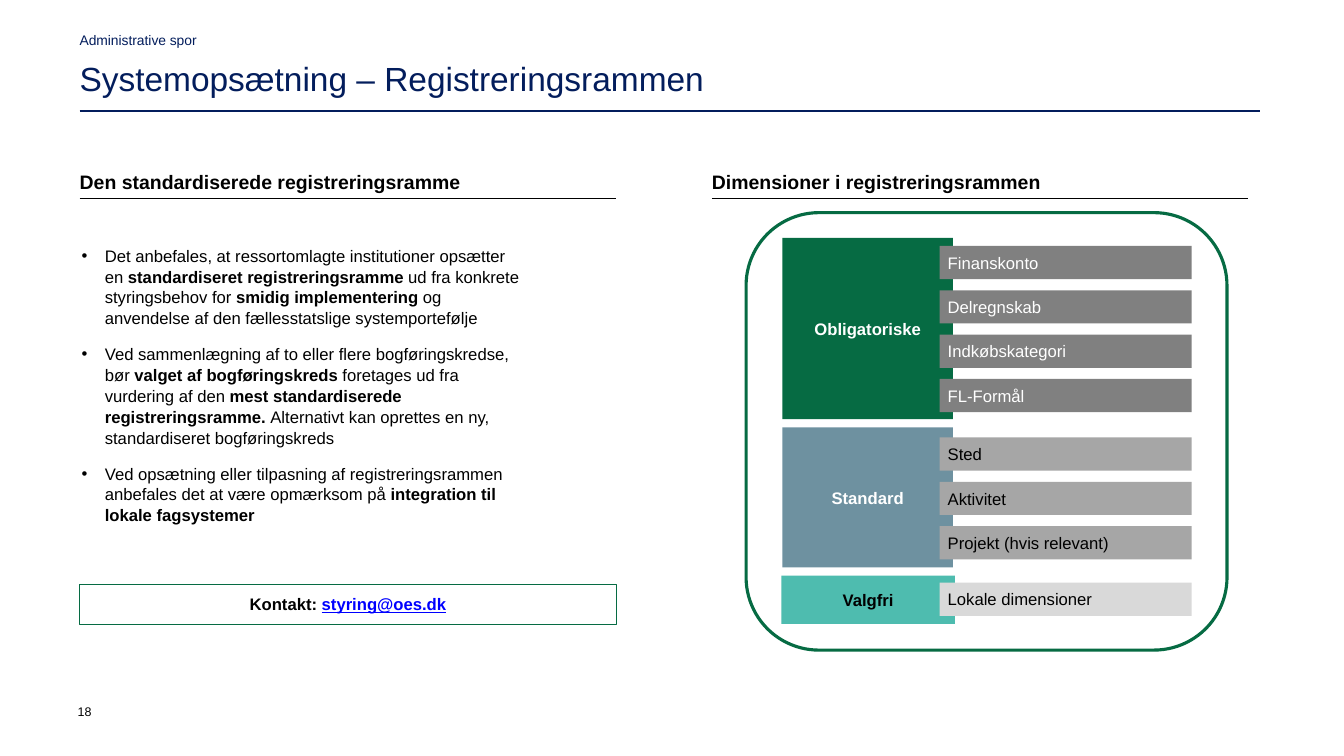
from lxml import etree
from pptx import Presentation
from pptx import util as u
from pptx.dml import color
from pptx.enum import shapes, text
from pptx.oxml import ns

NAVY, GREEN, BLACK, WHITE = "031D5C", "066B43", "000000", "FFFFFF"
LEFT, RIGHT, COLUMN_WIDTH = 0.79, 7.06, 5.32
BAR_STEP = 0.44


def paint(target, hex_value):
    target.rgb = color.RGBColor.from_string(hex_value)


def box(left, top, width, height):
    return [u.Inches(value) for value in (left, top, width, height)]


class SlideBuilder:
    font_name = "Arial"

    def __init__(self, presentation):
        self.slide = presentation.slides.add_slide(presentation.slide_layouts[5])

    def fill_text(self, shape, paragraphs, size, hex_value=BLACK, insets=(0, 0, 0, 0),
                  bullet=False, anchor=text.MSO_ANCHOR.TOP, **paragraph_format):
        frame = shape.text_frame
        left, top, right, bottom = [u.Inches(inset) for inset in insets]
        frame_format = {
            "word_wrap": True, "auto_size": text.MSO_AUTO_SIZE.NONE,
            "vertical_anchor": anchor, "margin_left": left, "margin_top": top,
            "margin_right": right, "margin_bottom": bottom,
        }
        for name, value in frame_format.items():
            setattr(frame, name, value)
        for index, runs in enumerate(paragraphs):
            paragraph = frame.add_paragraph() if index else frame.paragraphs[0]
            settings = {"alignment": text.PP_ALIGN.LEFT,
                        "space_before": u.Pt(10.9 if index else 0)}
            settings.update(paragraph_format)
            for name, value in settings.items():
                setattr(paragraph, name, value)
            if bullet:
                self.add_bullet(paragraph)
            for words, run_format in runs:
                run = paragraph.add_run()
                run.text = words
                font_format = {"name": self.font_name, "size": u.Pt(size), "bold": False}
                run_color = run_format.get("color", hex_value)
                font_format.update((key, value) for key, value in run_format.items()
                                   if key != "color")
                for name, value in font_format.items():
                    setattr(run.font, name, value)
                paint(run.font.color, run_color)

    def add_bullet(self, paragraph):
        properties = paragraph._p.get_or_add_pPr()
        properties.set("marL", str(u.Inches(0.23)))
        properties.set("indent", str(u.Inches(-0.23)))
        font = etree.SubElement(properties, ns.qn("a:buFont"))
        font.set("typeface", self.font_name)
        etree.SubElement(properties, ns.qn("a:buChar")).set("char", "•")

    def title(self, words, position, **style):
        shape = self.slide.shapes.title
        shape.left, shape.top, shape.width, shape.height = box(*position)
        self.fill_text(shape, [[(words, {})]], **style)

    def text_box(self, paragraphs, position, **style):
        self.fill_text(self.slide.shapes.add_textbox(*box(*position)), paragraphs, **style)

    def block(self, position, fill=None, line=None, line_width=0.5,
              kind=shapes.MSO_SHAPE.RECTANGLE):
        shape = self.slide.shapes.add_shape(kind, *box(*position))
        shape.shadow.inherit = False
        if fill:
            shape.fill.solid()
            paint(shape.fill.fore_color, fill)
        else:
            shape.fill.background()
        if line:
            paint(shape.line.color, line)
            shape.line.width = u.Pt(line_width)
        else:
            shape.line.fill.background()
        return shape

    def label(self, runs, position, hex_value=BLACK, insets=(0.1, 0.05, 0.1, 0.05),
              alignment=text.PP_ALIGN.CENTER, **look):
        self.fill_text(self.block(position, **look), [runs], 11.9, hex_value, insets,
                       anchor=text.MSO_ANCHOR.MIDDLE, alignment=alignment)

    def rule(self, left, right, top, hex_value, width):
        line = self.slide.shapes.add_connector(
            shapes.MSO_CONNECTOR.STRAIGHT, u.Inches(left), u.Inches(top),
            u.Inches(right), u.Inches(top))
        paint(line.line.color, hex_value)
        line.line.width = u.Pt(width)
        etree.SubElement(line._element.spPr, ns.qn("a:effectLst"))

    def heading(self, words, left):
        self.text_box([[(words, {"bold": True})]], (left, 1.69, COLUMN_WIDTH, 0.23), size=13.9)
        self.rule(left, left + COLUMN_WIDTH, 1.97, BLACK, 0.5)


def main():
    presentation = Presentation()
    presentation.slide_width, presentation.slide_height = u.Inches(13.33), u.Inches(7.5)
    builder = SlideBuilder(presentation)
    bold = {"bold": True}

    builder.text_box([[("Administrative spor", {})]], (LEFT, 0.33, 11.71, 0.21),
                     size=9.9, hex_value=NAVY, line_spacing=0.9)
    builder.title("Systemopsætning – Registreringsrammen", (LEFT, 0.62, 11.71, 0.39),
                  size=23.9, hex_value=NAVY, line_spacing=0.9)
    builder.rule(LEFT, 12.5, 1.1, NAVY, 1.5)
    builder.heading("Den standardiserede registreringsramme", LEFT)
    builder.heading("Dimensioner i registreringsrammen", RIGHT)

    advice = [
        [("Det anbefales, at ressortomlagte institutioner opsætter en ", {}),
         ("standardiseret registreringsramme ", bold),
         ("ud fra konkrete styringsbehov for ", {}),
         ("smidig implementering ", bold),
         ("og anvendelse af den fællesstatslige systemportefølje", {})],
        [("Ved sammenlægning af to eller flere bogføringskredse, bør ", {}),
         ("valget af bogføringskreds ", bold),
         ("foretages ud fra vurdering af den ", {}),
         ("mest standardiserede registreringsramme. ", bold),
         ("Alternativt kan oprettes en ny, standardiseret bogføringskreds", {})],
        [("Ved opsætning eller tilpasning af registreringsrammen anbefales det "
          "at være opmærksom på ", {}),
         ("integration til lokale fagsystemer", bold)],
    ]
    builder.text_box(advice, (0.81, 2.43, 5.55, 2.99), size=11.9,
                     insets=(0, 0, 1.13, 0), bullet=True, line_spacing=1.04)
    builder.label([("Kontakt: ", bold),
                   ("styring@oes.dk", {"bold": True, "underline": True, "color": "0000FF"})],
                  (LEFT, 5.8, COLUMN_WIDTH, 0.39), line=GREEN)

    builder.block((7.4, 2.11, 4.77, 4.34), line=GREEN, line_width=2.25,
                  kind=shapes.MSO_SHAPE.ROUNDED_RECTANGLE)
    groups = [
        ("Obligatoriske", (7.76, 2.36, 1.69, 1.8), GREEN, WHITE, 2.44, "808080", WHITE,
         ["Finanskonto", "Delregnskab", "Indkøbskategori", "FL-Formål"]),
        ("Standard", (7.76, 4.24, 1.69, 1.39), "6E91A0", WHITE, 4.34, "A6A6A6", BLACK,
         ["Sted", "Aktivitet", "Projekt (hvis relevant)"]),
        ("Valgfri", (7.75, 5.71, 1.72, 0.48), "4EBCAF", BLACK, 5.78, "D9D9D9", BLACK,
         ["Lokale dimensioner"]),
    ]
    for name, position, fill, ink, bar_top, bar_fill, bar_ink, dimensions in groups:
        builder.label([(name, bold)], position, ink, (0.04, 0.05, 0.04, 0.05), fill=fill)
        for row, dimension in enumerate(dimensions):
            builder.label([(dimension, {})], (9.32, bar_top + row * BAR_STEP, 2.5, 0.33),
                          bar_ink, (0.08, 0.05, 0, 0.05), text.PP_ALIGN.LEFT, fill=bar_fill)

    builder.text_box([[("18", {})]], (0.77, 6.98, 0.31, 0.39), size=8.9)
    presentation.save("out.pptx")


if __name__ == "__main__":
    main()
